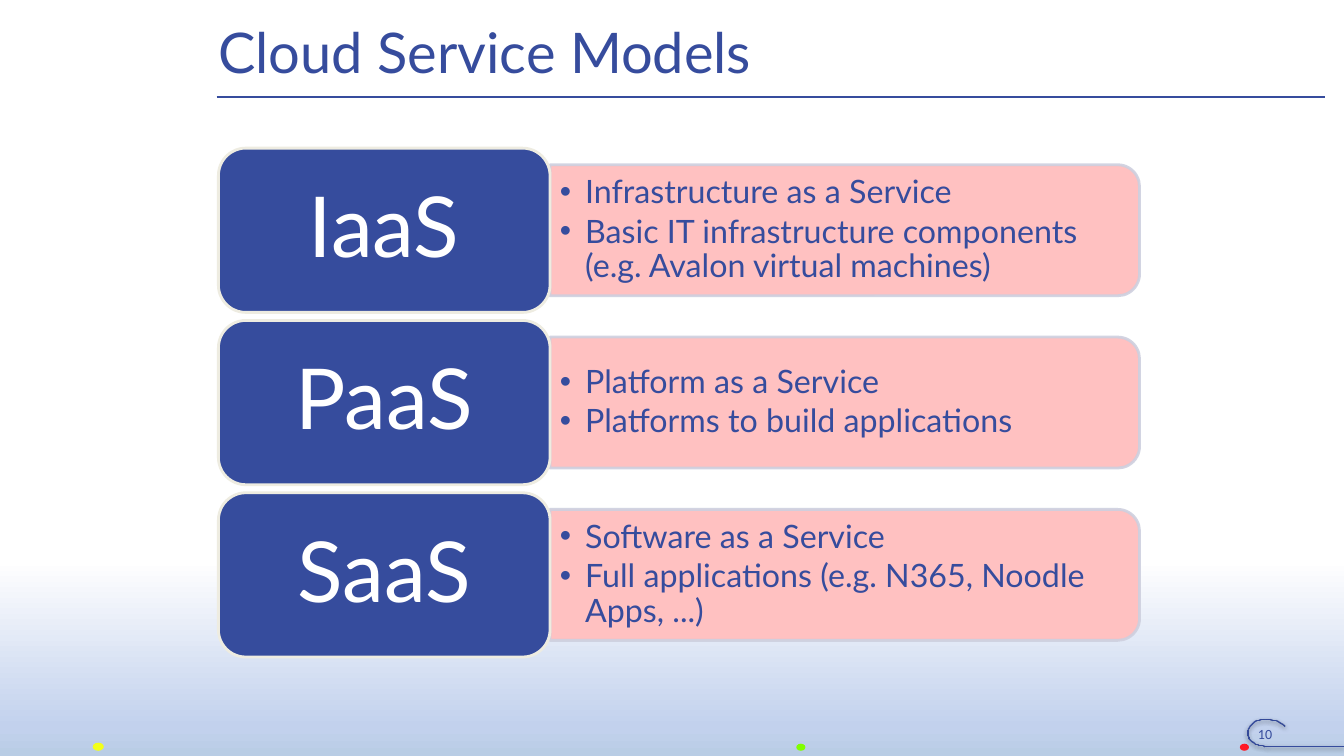
import copy
import itertools

import lxml.etree
import pptx
import pptx.dml.color
import pptx.enum.shapes
import pptx.enum.text
import pptx.oxml.ns
import pptx.util

RGB = pptx.dml.color.RGBColor
SHAPE = pptx.enum.shapes.MSO_SHAPE
ALIGN = pptx.enum.text.PP_ALIGN
ANCHOR = pptx.enum.text.MSO_ANCHOR
qn = pptx.oxml.ns.qn

NAVY = RGB(0x36, 0x4C, 0x9D)
PINK = RGB(0xFF, 0xC1, 0xC1)
PANEL_EDGE = RGB(0xCE, 0xD0, 0xDF)
CARD_EDGE = RGB(0xEE, 0xEC, 0xE1)
WHITE = RGB(0xFF, 0xFF, 0xFF)
RED = RGB(0xFF, 0x1A, 0x26)
GREEN = RGB(0x80, 0xFF, 0x00)
YELLOW = RGB(0xF2, 0xFF, 0x1A)
BLACK = RGB(0, 0, 0)
FADE = [(0, RGB(0xB9, 0xCD, 0xE5)), (0.15, RGB(0xC2, 0xD1, 0xED)), (1, WHITE)]

COLUMNS, ROWS = 160, 90
FIRST_CENTRE, PITCH = 27.42, 20.52
CARD_WIDTH, CARD_HEIGHT = 39.48, 19.56
PANEL_LEFT, PANEL_WIDTH, PANEL_HEIGHT = 65.46, 70.2, 15.6
LIST_HEIGHT = 14.16

MODELS = [
    ("IaaS", ["Infrastructure as a Service",
              "Basic IT infrastructure components (e.g. Avalon virtual machines)"]),
    ("PaaS", ["Platform as a Service", "Platforms to build applications"]),
    ("SaaS", ["Software as a Service",
              "Full applications (e.g. N365, Noodle Apps, ...)"]),
]
DOTS = [(147.6, 88.56, 1.08, 0.84, RED), (94.8, 88.56, 1.08, 0.84, GREEN),
        (11.04, 88.44, 1.32, 0.96, YELLOW)]
SWIRL = [
    (153, 86.52), (152.76, 86.28), (152.52, 86.16), (152.16, 85.92), (151.92, 85.8),
    (151.56, 85.8), (151.2, 85.68), (150.96, 85.68), (150.72, 85.68), (150.36, 85.68),
    (150.12, 85.68), (149.88, 85.8), (149.64, 85.8), (149.4, 85.92), (149.28, 86.04),
    (149.04, 86.28), (148.92, 86.4), (148.8, 86.52), (148.68, 86.76), (148.56, 86.88),
    (148.56, 87.12), (148.56, 87.36), (148.56, 87.6), (148.68, 87.72), (148.68, 87.96),
    (148.8, 88.08), (148.92, 88.2), (149.04, 88.32), (149.28, 88.44), (149.4, 88.56),
    (149.52, 88.68), (149.76, 88.68), (149.88, 88.8), (150.12, 88.8), (150.24, 88.8),
    (150.36, 88.8), (150.6, 88.92), (150.72, 88.92), (150.84, 88.92), (160, 88.92)]


class Page:
    """Draws styled elements on one slide, in columns and rows of a grid."""

    def __init__(self, deck, layout):
        self.page = deck.slides.add_slide(layout)
        self.shapes = self.page.shapes
        self.cell = deck.slide_width / COLUMNS

    def grid(self, *lengths):
        return [round(length * self.cell) for length in lengths]

    def place(self, box, *bounds):
        box.left, box.top, box.width, box.height = self.grid(*bounds)

    def shape(self, kind, bounds, fill=None, edge=None):
        box = self.shapes.add_shape(kind, *self.grid(*bounds))
        box.shadow.inherit = False
        if fill is not None:
            box.fill.solid()
            box.fill.fore_color.rgb = fill
        if edge is None:
            box.line.fill.background()
        else:
            box.line.color.rgb = edge
            box.line.width = pptx.util.Pt(2)
        return box

    def frame(self, box, margins, anchor=ANCHOR.MIDDLE):
        frame = box.text_frame
        frame.word_wrap = True
        frame.auto_size = pptx.enum.text.MSO_AUTO_SIZE.NONE
        frame.vertical_anchor = anchor
        (frame.margin_left, frame.margin_top, frame.margin_right,
         frame.margin_bottom) = self.grid(*margins)
        return frame

    def style(self, para, size, colour=NAVY, font="Lato", align=ALIGN.LEFT):
        para.alignment = align
        for span in para.runs:
            span.font.size = pptx.util.Pt(size)
            span.font.name = font
            span.font.bold = False
            span.font.color.rgb = colour

    def title(self, text, bounds):
        box = self.shapes.title
        self.place(box, *bounds)
        frame = self.frame(box, (0, 0.6, 1.2, 0.6))
        frame.text = text
        self.style(frame.paragraphs[0], 40)

    def fade(self, bounds):
        box = self.shape(SHAPE.RECTANGLE, bounds)
        box.fill.gradient()
        box.fill.gradient_angle = 90
        stops = box.element.spPr.find(".//" + qn("a:gsLst"))
        stops.insert(1, copy.deepcopy(stops[0]))
        for stop, (position, colour) in zip(box.fill.gradient_stops, FADE):
            stop.position = position
            stop.color.rgb = colour

    def line(self, start, end, width):
        line = self.shapes.add_connector(
            pptx.enum.shapes.MSO_CONNECTOR.STRAIGHT, *self.grid(*start, *end))
        line.line.color.rgb = NAVY
        line.line.width = pptx.util.Pt(width)
        return lxml.etree.SubElement(line.element.spPr, qn("a:effectLst"))

    def swirl(self, points):
        for start, end in itertools.pairwise(points):
            effects = self.line(start, end, 1)
            shadow = lxml.etree.SubElement(
                effects, qn("a:outerShdw"), blurRad="39370", dist="20320",
                dir="5400000", rotWithShape="0")
            colour = lxml.etree.SubElement(shadow, qn("a:srgbClr"), val=str(BLACK))
            lxml.etree.SubElement(colour, qn("a:alpha"), val="38000")

    def panel(self, centre):
        left = PANEL_LEFT + (PANEL_WIDTH - PANEL_HEIGHT) / 2
        box = self.shape(SHAPE.ROUND_2_SAME_RECTANGLE,
                         (left, centre - PANEL_WIDTH / 2, PANEL_HEIGHT, PANEL_WIDTH),
                         PINK, PANEL_EDGE)
        box.rotation = 90
        edge = box.element.spPr.find(qn("a:ln")).find(".//" + qn("a:srgbClr"))
        lxml.etree.SubElement(edge, qn("a:alpha"), val="90000")

    def card(self, text, centre):
        box = self.shape(SHAPE.ROUNDED_RECTANGLE,
                         (26, centre - CARD_HEIGHT / 2, CARD_WIDTH, CARD_HEIGHT),
                         NAVY, CARD_EDGE)
        frame = self.frame(box, (3.96, 2.4, 3.96, 2.4))
        frame.text = text
        frame.paragraphs[0].line_spacing = 0.9
        self.style(frame.paragraphs[0], 60, WHITE, align=ALIGN.CENTER)

    def bullets(self, box, items, centre):
        box.element.getparent().append(box.element)
        self.place(box, PANEL_LEFT, centre - LIST_HEIGHT / 2, 69.36, LIST_HEIGHT)
        frame = self.frame(box, (1.2, 0.6, 1.2, 0.6))
        frame.text = "\n".join(items)
        for para in frame.paragraphs:
            para.line_spacing = 0.9
            para.space_before = pptx.util.Pt(0)
            para.space_after = pptx.util.Pt(3.45)
            props = para._p.get_or_add_pPr()
            indent = self.grid(3)[0]
            props.set("marL", str(indent))
            props.set("indent", str(-indent))
            lxml.etree.SubElement(props, qn("a:buFont"), typeface="Arial")
            lxml.etree.SubElement(props, qn("a:buChar"), char="•")
            self.style(para, 23)

    def number(self, text, bounds):
        box = self.shapes.add_textbox(*self.grid(*bounds))
        frame = self.frame(box, (1.2, 0.6, 1.2, 0.6), ANCHOR.TOP)
        frame.text = text
        self.style(frame.paragraphs[0], 10, font="Calibri", align=ALIGN.CENTER)


def main():
    deck = pptx.Presentation()
    deck.slide_width = pptx.util.Inches(13.33)
    deck.slide_height = pptx.util.Inches(7.5)
    page = Page(deck, deck.slide_layouts.get_by_name("Comparison"))
    _, *bodies = page.page.placeholders
    page.fade((0, 66.7, COLUMNS, ROWS - 66.7))
    page.line((25.8, 11.52), (157.7, 11.52), 1.5)
    for *bounds, colour in DOTS:
        page.shape(SHAPE.OVAL, bounds, colour)
    page.swirl(SWIRL)
    page.title("Cloud Service Models", (26, 1.8, 131.8, 8.64))
    for index, (name, items) in enumerate(MODELS):
        centre = FIRST_CENTRE + index * PITCH
        page.panel(centre)
        page.bullets(bodies[index], items, centre)
        page.card(name, centre)
    for spare in bodies[len(MODELS):]:
        spare.element.getparent().remove(spare.element)
    page.number("10", (146.4, 85.8, 8.4, 2.88))
    deck.save("out.pptx")


if __name__ == "__main__":
    main()
